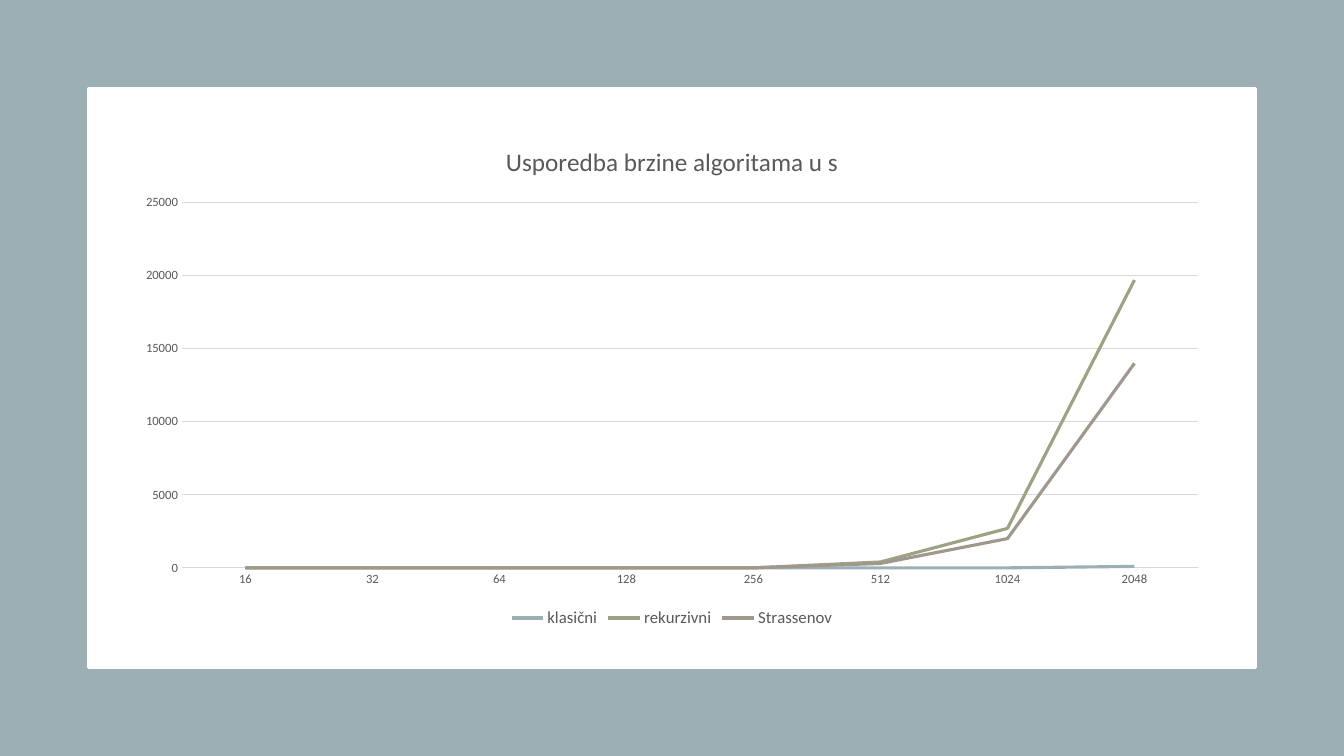
from pptx import Presentation
from pptx.chart.data import CategoryChartData
from pptx.dml.color import RGBColor
from pptx.enum.chart import XL_CHART_TYPE, XL_LEGEND_POSITION, XL_MARKER_STYLE, XL_TICK_MARK
from pptx.enum.shapes import MSO_SHAPE
from pptx.util import Pt

BACKGROUND = RGBColor(0xF2, 0xF2, 0xF2)
WHITE = RGBColor(0xFF, 0xFF, 0xFF)
BLACK = RGBColor(0x00, 0x00, 0x00)
GREY = RGBColor(0x59, 0x59, 0x59)
LIGHT_GREY = RGBColor(0xD9, 0xD9, 0xD9)
BLUE = RGBColor(0x9B, 0xAF, 0xB5)
GREEN = RGBColor(0x9C, 0xA3, 0x83)
TAUPE = RGBColor(0xA0, 0x98, 0x8C)

FONT = "Calibri"
WIDTH, HEIGHT = 960, 540
SIZES = [2 ** n for n in range(4, 12)]
ALGORITHMS = [
    ("klasični", BLUE, [0, 0, 0, 0, 0, 0, 0, 100]),
    ("rekurzivni", GREEN, [0, 0, 0, 0, 0, 400, 2700, 19700]),
    ("Strassenov", TAUPE, [0, 0, 0, 0, 0, 300, 2000, 14000]),
]


def inset(box, gap):
    """Return the box shrunk by the gap on every side."""
    x, y, w, h = box
    return x + gap, y + gap, w - 2 * gap, h - 2 * gap


def set_font(font, size, color=GREY):
    """Apply the slide typeface with a size and colour."""
    font.name = FONT
    font.size = Pt(size)
    font.bold = False
    font.color.rgb = color


def set_line(line, color, width):
    """Give a line its colour and width."""
    line.color.rgb = color
    line.width = Pt(width)


def add_panel(s, box, fill, border=None):
    """Fill the box with a plain rectangle."""
    sp = s.shapes.add_shape(MSO_SHAPE.RECTANGLE, *map(Pt, box))
    sp.shadow.inherit = False
    sp.fill.solid()
    sp.fill.fore_color.rgb = fill
    if border is None:
        sp.line.fill.background()
    else:
        set_line(sp.line, border, 2)


def format_axes(chart):
    """Format the labels, axis lines and gridlines."""
    cat, val = chart.category_axis, chart.value_axis
    for axis in (cat, val):
        axis.major_tick_mark = axis.minor_tick_mark = XL_TICK_MARK.NONE
        set_font(axis.tick_labels.font, 9)
    set_line(cat.format.line, LIGHT_GREY, 0.75)
    val.format.line.fill.background()
    val.minimum_scale, val.maximum_scale, val.major_unit = 0, 25000, 5000
    set_line(val.major_gridlines.format.line, LIGHT_GREY, 0.75)


def add_speed_chart(s, box):
    """Draw the running times of the algorithms as lines in the box."""
    data = CategoryChartData()
    data.categories = [str(size) for size in SIZES]
    for name, _, times in ALGORITHMS:
        data.add_series(name, times)
    chart = s.shapes.add_chart(XL_CHART_TYPE.LINE, *map(Pt, box), data).chart
    set_font(chart.font, 10, BLACK)

    chart.has_title = True
    p = chart.chart_title.text_frame.paragraphs[0]
    p.text = "Usporedba brzine algoritama u s"
    set_font(p.font, 18)
    chart.chart_title.include_in_layout = False

    chart.has_legend = True
    chart.legend.position = XL_LEGEND_POSITION.BOTTOM
    chart.legend.include_in_layout = False
    set_font(chart.legend.font, 12)

    format_axes(chart)
    plot = chart.plots[0]
    plot.vary_by_categories = False
    for series, (_, color, _) in zip(plot.series, ALGORITHMS):
        series.smooth = False
        series.marker.style = XL_MARKER_STYLE.NONE
        set_line(series.format.line, color, 2.25)


def build_chart_slide(prs, box):
    """Build a slide with a framed chart inside the box."""
    s = prs.slides.add_slide(prs.slide_layouts[6])
    s.background.fill.solid()
    s.background.fill.fore_color.rgb = BACKGROUND
    card = inset(box, 63.4)
    add_panel(s, box, BLUE)
    add_panel(s, card, WHITE, WHITE)
    add_speed_chart(s, inset(card, 25.2))


def main():
    """Create and save the presentation."""
    prs = Presentation()
    prs.slide_width, prs.slide_height = Pt(WIDTH), Pt(HEIGHT)
    build_chart_slide(prs, (0, 0, WIDTH, HEIGHT))
    prs.save("out.pptx")


if __name__ == "__main__":
    main()
